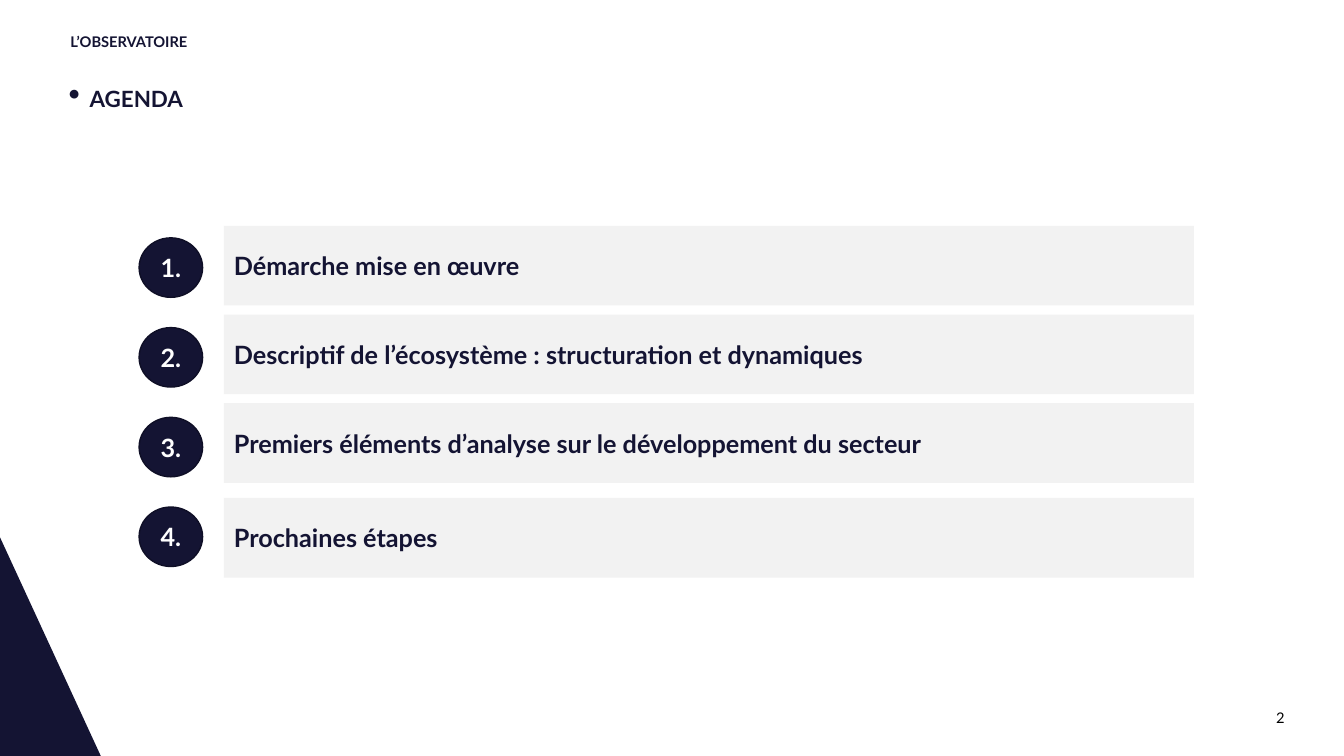
"""Build the agenda slide with four numbered topics."""
import pptx
import pptx.util
import pptx.dml.color
import pptx.enum.shapes
import pptx.enum.text
import pptx.oxml
import pptx.oxml.ns
from pptx.util import Inches

HUES = {"navy": "141433", "edge": "0F0F26", "grey": "F2F2F2",
        "white": "FFFFFF", "black": "000000"}
TOPICS = [
    (2.24, "Démarche mise en œuvre"),
    (3.12, "Descriptif de l’écosystème : structuration et dynamiques"),
    (4, "Premiers éléments d’analyse sur le développement du secteur"),
    (4.94, "Prochaines étapes"),
]
ALIGN = pptx.enum.text.PP_ALIGN
ANCHOR = pptx.enum.text.MSO_ANCHOR
SHAPE = pptx.enum.shapes.MSO_SHAPE


def color(name):
    """Return the named colour."""
    return pptx.dml.color.RGBColor.from_string(HUES[name])


def paint(shape, fill, line=None):
    """Set the fill and outline of a shape and drop its shadow."""
    shape.shadow.inherit = False
    shape.fill.solid()
    shape.fill.fore_color.rgb = color(fill)
    if line:
        shape.line.color.rgb = color(line)
        shape.line.width = pptx.util.Pt(1)
    else:
        shape.line.fill.background()


def write(shape, text, size, hue, align=ALIGN.LEFT, bold=True,
          inset=(0.1, 0.05, 0.1, 0.05), anchor=ANCHOR.MIDDLE):
    """Put one formatted paragraph in a shape and return it."""
    frame = shape.text_frame
    frame.word_wrap = True
    frame.vertical_anchor = anchor
    (frame.margin_left, frame.margin_top,
     frame.margin_right, frame.margin_bottom) = map(Inches, inset)
    frame.text = text
    para = frame.paragraphs[0]
    para.alignment = align
    font = para.runs[0].font
    font.name = "Lato"
    font.size = pptx.util.Pt(size)
    font.bold = bold
    font.color.rgb = color(hue)
    return para


def add_label(slide, box, *args, **style):
    """Add a text box and return its paragraph."""
    label = slide.shapes.add_textbox(*map(Inches, box))
    return write(label, *args, **style)


def add_bullet(para):
    """Give a paragraph a large round bullet with a hanging indent."""
    props = para._p.get_or_add_pPr()
    props.set("marL", str(Inches(0.21)))
    props.set("indent", str(-Inches(0.21)))
    for tag, key, value in (("a:buSzPct", "val", "150000"),
                            ("a:buChar", "char", "•")):
        item = pptx.oxml.ns.qn(tag)
        props.append(props.makeelement(item, {key: value}))


def add_corner(slide):
    """Add the dark triangle in the bottom left corner."""
    path = slide.shapes.build_freeform(0, Inches(7.5))
    path.add_line_segments([(Inches(1), Inches(7.5)), (0, Inches(5.33))])
    paint(path.convert_to_shape(), "navy")


def add_bar(slide, top, text):
    """Add the grey bar of one topic."""
    bar = slide.shapes.add_shape(
        SHAPE.RECTANGLE, *map(Inches, (2.22, top, 9.62, 0.79)))
    paint(bar, "grey")
    para = write(bar, text, 18, "navy", ALIGN.JUSTIFY,
                 inset=(0.08, 0.05, 0.1, 0.05))
    para._p.get_or_add_pPr().set("marL", str(Inches(0.02)))


def add_badge(slide, index):
    """Add the round number of one topic."""
    top = 2.36 + 0.89 * index
    badge = slide.shapes.add_shape(
        SHAPE.OVAL, *map(Inches, (1.38, top, 0.63, 0.59)))
    paint(badge, "navy", "edge")
    write(badge, f"{index + 1}.", 18, "white", ALIGN.CENTER)


def main():
    """Build and save the slide."""
    deck = pptx.Presentation()
    deck.slide_width, deck.slide_height = Inches(13.33), Inches(7.5)
    slide = deck.slides.add_slide(deck.slide_layouts[6])
    add_corner(slide)
    title = add_label(slide, (0.6, 0.34, 5.91, 0.16), "L’OBSERVATOIRE",
                      10.5, "navy", inset=(0.1, 0, 0.1, 0))
    title.line_spacing = 0.9
    add_label(slide, (9.74, 7.03, 3, 0.18), "2", 10.5, "black",
              ALIGN.RIGHT, bold=False, inset=(0, 0, 0, 0))
    head = add_label(slide, (0.6, 0.8, 12.56, 0.37), "AGENDA", 16, "navy",
                     inset=(0.08, 0.05, 0.1, 0.05), anchor=ANCHOR.TOP)
    add_bullet(head)
    for index, (top, text) in enumerate(TOPICS):
        add_bar(slide, top, text)
        add_badge(slide, index)
    deck.save("out.pptx")


if __name__ == "__main__":
    main()
